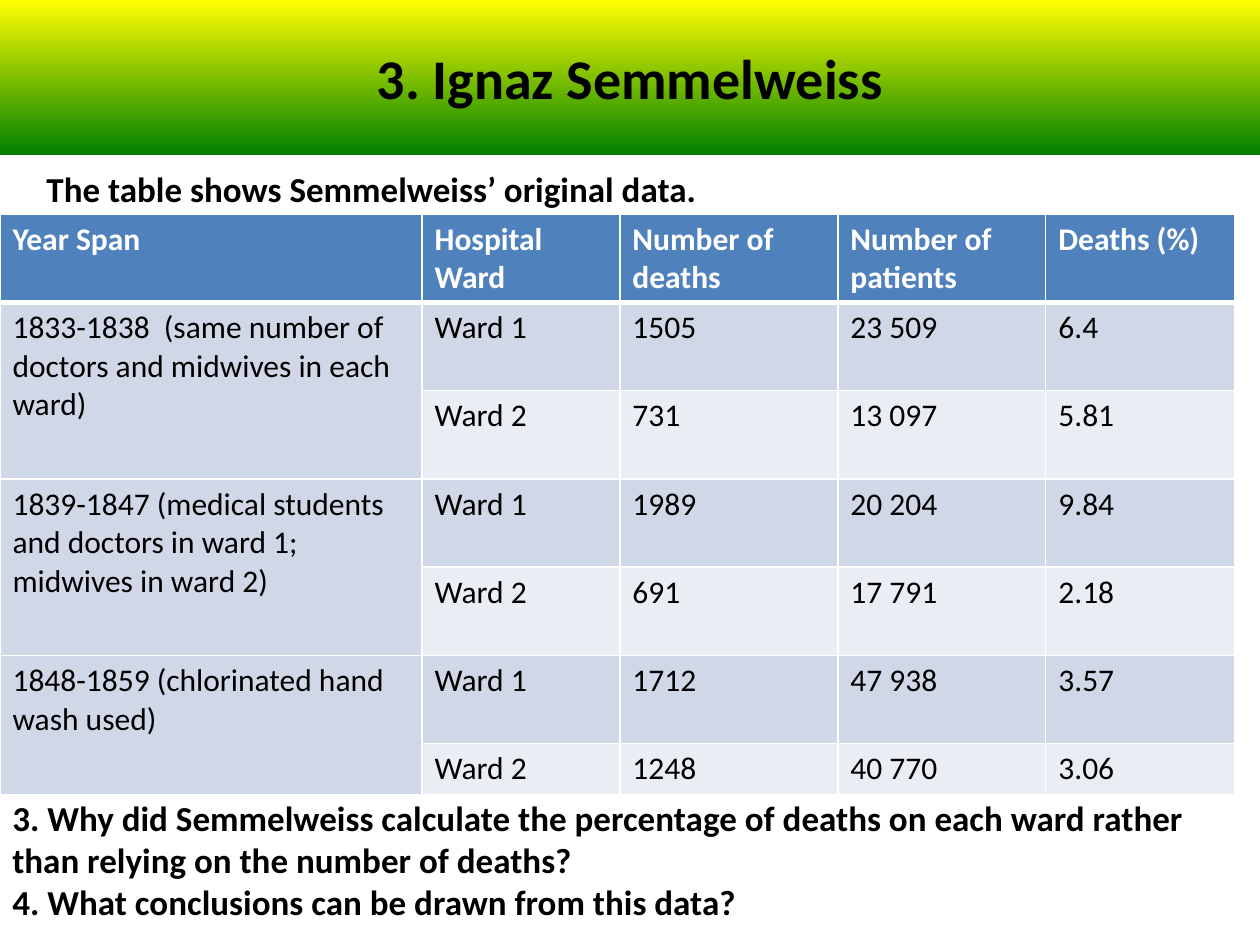
"""Build the slide on Semmelweiss' hospital data."""
from lxml import etree
from pptx import Presentation
from pptx import util as u
from pptx.dml.color import RGBColor
from pptx.enum import text
from pptx.oxml import ns

BLACK = RGBColor(0, 0, 0)
WHITE = RGBColor(255, 255, 255)
YELLOW = RGBColor(255, 255, 0)
GREEN = RGBColor(0, 128, 0)
BLUE = RGBColor(0x4F, 0x81, 0xBD)
DARK = RGBColor(0xD0, 0xD8, 0xE8)
LIGHT = RGBColor(0xE9, 0xED, 0xF4)

TITLE = "3. Ignaz Semmelweiss"
INTRO = "The table shows Semmelweiss’ original data."
TASKS = (
    "3. Why did Semmelweiss calculate the percentage of deaths on each ward "
    "rather than relying on the number of deaths?\n"
    "4. What conclusions can be drawn from this data?"
)
HEAD = ["Year Span", "Hospital Ward", "Number of deaths", "Number of patients", "Deaths (%)"]
SPANS = [
    ("1833-1838  (same number of doctors and midwives in each ward)",
     [("1505", "23 509", "6.4"), ("731", "13 097", "5.81")]),
    ("1839-1847 (medical students and doctors in ward 1; midwives in ward 2)",
     [("1989", "20 204", "9.84"), ("691", "17 791", "2.18")]),
    ("1848-1859 (chlorinated hand wash used)",
     [("1712", "47 938", "3.57"), ("1248", "40 770", "3.06")]),
]
WIDTHS = [3.35, 1.57, 1.73, 1.65, 1.5]
HEIGHTS = [0.69] + [0.7] * 5 + [0.41]


def style(frame, size, color=BLACK, bold=True):
    for para in frame.paragraphs:
        for run in para.runs:
            font = run.font
            font.name, font.size, font.bold = "Calibri", u.Pt(size), bold
            font.color.rgb = color


def add_title(slide):
    title = slide.shapes.title
    title.left, title.top = 0, 0
    title.width, title.height = u.Inches(10), u.Inches(1.23)
    title.fill.gradient()
    title.fill.gradient_angle = 270
    for stop, color in zip(title.fill.gradient_stops, (YELLOW, GREEN)):
        stop.color.rgb = color
    frame = title.text_frame
    frame.text = TITLE
    frame.vertical_anchor = text.MSO_ANCHOR.MIDDLE
    frame.paragraphs[0].alignment = text.PP_ALIGN.CENTER
    style(frame, 32)


def add_note(slide, words, *box):
    frame = slide.shapes.add_textbox(*map(u.Inches, box)).text_frame
    frame.word_wrap = True
    frame.auto_size = text.MSO_AUTO_SIZE.SHAPE_TO_FIT_TEXT
    frame.text = words
    style(frame, 20)


def add_edges(cell, base):
    props = cell._tc.get_or_add_tcPr()
    for side in "LRTB":
        width = base if side == "B" else 1
        line = etree.SubElement(props, ns.qn("a:ln" + side), w=str(u.Pt(width)))
        fill = etree.SubElement(line, ns.qn("a:solidFill"))
        etree.SubElement(fill, ns.qn("a:srgbClr"), val=str(WHITE))


def add_data(slide):
    rows = [HEAD]
    for span, wards in SPANS:
        for num, ward in enumerate(wards, 1):
            rows.append([span if num == 1 else "", f"Ward {num}", *ward])
    table = slide.shapes.add_table(
        len(rows), len(HEAD), 0, u.Inches(1.7),
        u.Inches(sum(WIDTHS)), u.Inches(sum(HEIGHTS))).table
    for col, width in zip(table.columns, WIDTHS):
        col.width = u.Inches(width)
    for row, height in zip(table.rows, HEIGHTS):
        row.height = u.Inches(height)
    for r, row in enumerate(rows):
        top = r == 0
        shade = BLUE if top else DARK if r % 2 else LIGHT
        for c, words in enumerate(row):
            cell = table.cell(r, c)
            cell.text = words
            style(cell.text_frame, 18, WHITE if top else BLACK, top)
            add_edges(cell, 3 if top else 1)
            cell.fill.solid()
            cell.fill.fore_color.rgb = shade
    for r in range(1, len(rows), 2):
        table.cell(r, 0).merge(table.cell(r + 1, 0))


def main():
    deck = Presentation()
    deck.slide_width, deck.slide_height = u.Inches(10), u.Inches(7.5)
    slide = deck.slides.add_slide(deck.slide_layouts[5])
    add_title(slide)
    add_note(slide, INTRO, 0.27, 1.28, 9.29, 1.11)
    add_data(slide)
    add_note(slide, TASKS, 0, 6.27, 9.8, 1.78)
    deck.save("out.pptx")


if __name__ == "__main__":
    main()
